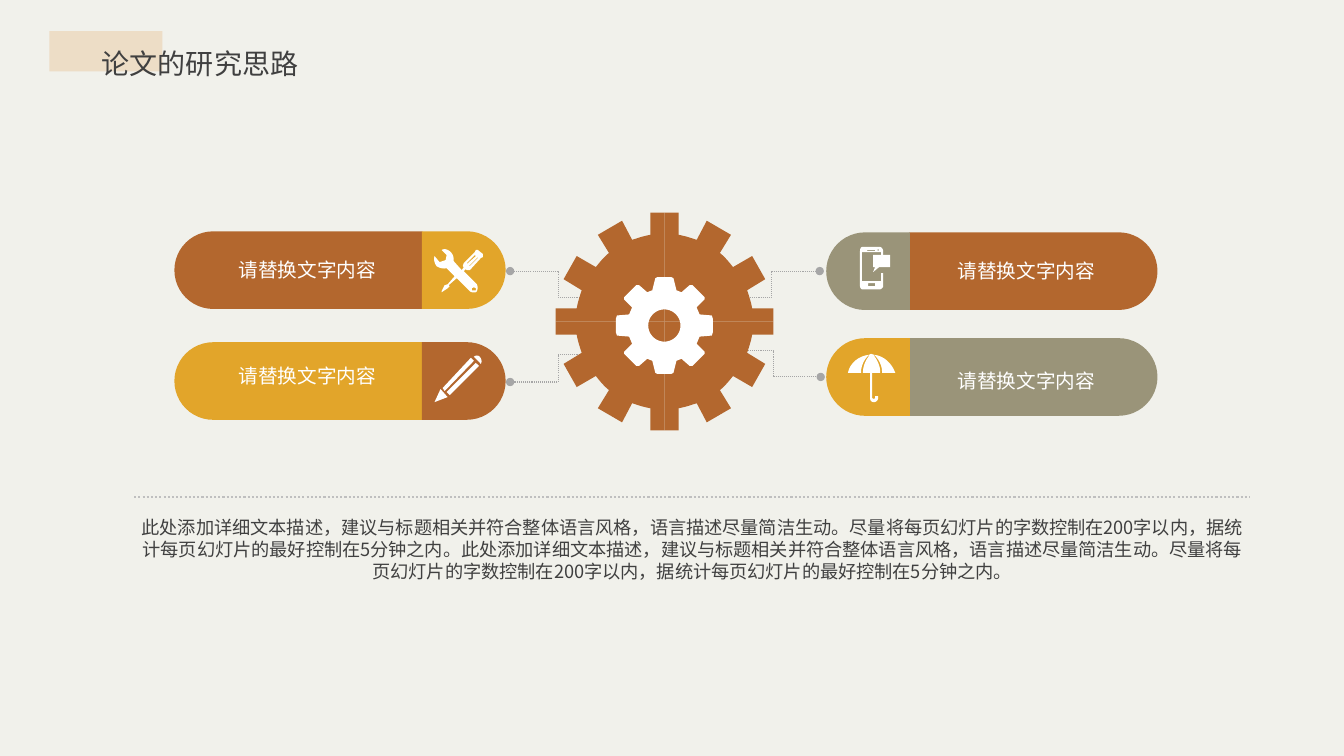
import math
from dataclasses import dataclass

import pptx
import pptx.dml.color
import pptx.enum.dml
import pptx.enum.shapes
import pptx.enum.text
import pptx.oxml.ns
import pptx.util
from lxml import etree

Inches = pptx.util.Inches
RGBColor = pptx.dml.color.RGBColor
Align = pptx.enum.text.PP_ALIGN
Shape = pptx.enum.shapes.MSO_SHAPE
Connector = pptx.enum.shapes.MSO_CONNECTOR
qn = pptx.oxml.ns.qn

PAPER = RGBColor(0xF1, 0xF1, 0xEB)
BEIGE = RGBColor(0xED, 0xDD, 0xC6)
RUST = RGBColor(0xB3, 0x67, 0x2E)
AMBER = RGBColor(0xE2, 0xA5, 0x2A)
OLIVE = RGBColor(0x9A, 0x94, 0x79)
WHITE = RGBColor(0xFF, 0xFF, 0xFF)
INK = RGBColor(0x40, 0x40, 0x40)
LINK_GREY = RGBColor(0xA6, 0xA6, 0xA6)
RULE_GREY = RGBColor(0xBF, 0xBF, 0xBF)
FONT = "Noto Sans CJK SC"

Point = tuple[float, float]
Step = tuple[float, ...]  # two numbers: a corner; six: a cubic curve

PILL_HEIGHT, BODY_LENGTH, CAP_LENGTH = 0.77, 2.46, 0.83
GEAR_CENTRE = (6.59, 3.19)
HUB_CENTRE = (6.59, 3.23)
HOLE_RADIUS = 0.16

GEAR_QUARTER = [
    (0, 0), (0, 1.08), (0.14, 1.08), (0.14, 0.86), (0.2, 0.85, 0.26, 0.83, 0.32, 0.81),
    (0.42, 1), (0.66, 0.86), (0.55, 0.68), (0.6, 0.64, 0.64, 0.59, 0.68, 0.54),
    (0.87, 0.65), (1, 0.42), (0.82, 0.31), (0.84, 0.25, 0.86, 0.19, 0.87, 0.13),
    (1.08, 0.13), (1.08, 0),
]
HUB_QUARTER = [
    (0.07, 0.48), (0.09, 0.47), (0.12, 0.35), (0.17, 0.33), (0.25, 0.4), (0.28, 0.4),
    (0.4, 0.28), (0.4, 0.26), (0.32, 0.18), (0.35, 0.11), (0.47, 0.1), (0.48, 0.07),
]

TOOLS = [
    [(4.79, 2.52), (4.74, 2.48), (4.72, 2.48), (4.71, 2.5), (4.6, 2.61), (4.59, 2.64),
     (4.6, 2.65), (4.58, 2.68), (4.5, 2.59), (4.5, 2.56, 4.5, 2.53, 4.47, 2.5),
     (4.45, 2.48, 4.41, 2.46, 4.38, 2.48), (4.43, 2.53), (4.42, 2.58), (4.36, 2.6),
     (4.31, 2.54), (4.3, 2.58, 4.31, 2.61, 4.33, 2.64), (4.36, 2.66, 4.4, 2.67, 4.43, 2.66),
     (4.51, 2.74), (4.44, 2.82), (4.41, 2.83), (4.38, 2.89), (4.38, 2.9), (4.44, 2.86),
     (4.46, 2.84), (4.45, 2.83), (4.53, 2.76), (4.66, 2.89),
     (4.67, 2.9, 4.72, 2.91, 4.73, 2.89), (4.74, 2.87, 4.74, 2.84, 4.73, 2.82),
     (4.6, 2.69), (4.62, 2.67), (4.63, 2.68), (4.66, 2.68), (4.77, 2.56), (4.79, 2.55)],
    [(4.7, 2.85), (4.72, 2.86), (4.72, 2.88), (4.7, 2.88), (4.68, 2.88), (4.68, 2.86)],
    [(4.63, 2.62), (4.63, 2.61), (4.71, 2.53), (4.72, 2.54)],
    [(4.66, 2.64), (4.65, 2.64), (4.74, 2.55), (4.74, 2.56)],
]
PENCIL_TIP = [[(4.37, 3.86), (4.31, 3.99), (4.44, 3.94)]]
PENCIL_UPPER = [[(4.67, 3.55), (4.39, 3.85), (4.41, 3.88), (4.7, 3.58)]]
PENCIL_LOWER = [[(4.72, 3.6), (4.43, 3.89), (4.46, 3.92), (4.75, 3.63)]]
PENCIL_END = [[(4.76, 3.54), (4.73, 3.51, 4.7, 3.54, 4.7, 3.54), (4.77, 3.61),
               (4.77, 3.61, 4.79, 3.58, 4.76, 3.54)]]
PHONE = [
    [(8.74, 2.79), (8.55, 2.79), (8.55, 2.5), (8.74, 2.5), (8.74, 2.57), (8.76, 2.57),
     (8.76, 2.49), (8.76, 2.47, 8.74, 2.45, 8.73, 2.45), (8.55, 2.45),
     (8.54, 2.45, 8.53, 2.47, 8.53, 2.49), (8.53, 2.84),
     (8.53, 2.85, 8.54, 2.87, 8.55, 2.87), (8.73, 2.87),
     (8.74, 2.87, 8.76, 2.85, 8.76, 2.84), (8.76, 2.71), (8.74, 2.71)],
    [(8.71, 2.47), (8.72, 2.48), (8.71, 2.49), (8.7, 2.48)],
    [(8.6, 2.48), (8.68, 2.48), (8.68, 2.49), (8.6, 2.49)],
    [(8.68, 2.84), (8.61, 2.84), (8.61, 2.81), (8.68, 2.81)],
]
SPEECH = [[(8.66, 2.65), (8.68, 2.65), (8.66, 2.7), (8.72, 2.65), (8.83, 2.65),
           (8.83, 2.53), (8.66, 2.53)]]
UMBRELLA = [
    [(8.75, 3.7), (8.88, 3.7), (8.85, 3.61, 8.77, 3.53, 8.67, 3.52), (8.64, 3.51),
     (8.62, 3.52), (8.52, 3.53, 8.43, 3.6, 8.41, 3.7), (8.54, 3.7),
     (8.54, 3.59, 8.61, 3.53, 8.62, 3.52), (8.62, 3.53),
     (8.55, 3.62, 8.56, 3.7, 8.56, 3.7), (8.63, 3.7), (8.63, 3.95),
     (8.63, 3.97, 8.64, 3.99, 8.67, 3.99), (8.69, 3.99, 8.71, 3.97, 8.71, 3.95),
     (8.71, 3.93), (8.68, 3.93), (8.68, 3.95), (8.67, 3.96), (8.65, 3.95), (8.65, 3.7),
     (8.73, 3.7), (8.73, 3.7, 8.74, 3.62, 8.67, 3.53), (8.67, 3.52),
     (8.68, 3.53, 8.75, 3.59, 8.75, 3.7)],
]
ICON_PARTS = [TOOLS, PENCIL_TIP, PENCIL_UPPER, PENCIL_LOWER, PENCIL_END, PHONE, SPEECH, UMBRELLA]


@dataclass
class Pill:
    body_x: float
    cap_x: float
    middle: float
    body_color: RGBColor
    cap_color: RGBColor
    link_start: Point
    link_end: Point
    label_at: Point
    label_spacing: float


PILLS = [
    Pill(10.25, 8.61, 2.69, RUST, OLIVE, (7.18, 2.95), (8.13, 2.69), (9.37, 2.52), 1.0),
    Pill(10.25, 8.61, 3.74, OLIVE, AMBER, (7.2, 3.48), (8.14, 3.74), (9.37, 3.61), 1.0),
    Pill(2.96, 4.6, 3.78, AMBER, RUST, (6.01, 3.52), (5.06, 3.79), (2.24, 3.59), 0.9),
    Pill(2.96, 4.6, 2.68, RUST, AMBER, (6.01, 2.95), (5.06, 2.69), (2.24, 2.54), 0.9),
]
DESCRIPTION = (
    "此处添加详细文本描述，建议与标题相关并符合整体语言风格，语言描述尽量简洁生动。"
    "尽量将每页幻灯片的字数控制在200字以内，据统计每页幻灯片的最好控制在5分钟之内。"
)


def paint(shape, color: RGBColor) -> None:
    shape.shadow.inherit = False
    shape.fill.solid()
    shape.fill.fore_color.rgb = color
    shape.line.fill.background()


def write(box, text: str, size: float, color: RGBColor, align, spacing: float = 1.0) -> None:
    frame = box.text_frame
    frame.word_wrap = True
    frame.auto_size = pptx.enum.text.MSO_AUTO_SIZE.SHAPE_TO_FIT_TEXT
    frame.vertical_anchor = pptx.enum.text.MSO_ANCHOR.TOP
    para = frame.paragraphs[0]
    para.text = text
    para.alignment = align
    para.line_spacing = spacing
    para.font.size = pptx.util.Pt(size)
    para.font.name = FONT
    para.font.color.rgb = color
    for defaults in box.element.iter(qn("a:defRPr")):
        etree.SubElement(defaults, qn("a:ea"), typeface=FONT)


def add_text(page, at: Point, width: float, height: float):
    return page.shapes.add_textbox(Inches(at[0]), Inches(at[1]), Inches(width), Inches(height))


def add_line(page, kind, start: Point, end: Point, color: RGBColor, weight: float, dots: bool) -> None:
    """Draw a dotted connector, with round dots at both ends if asked."""
    line = page.shapes.add_connector(kind, *(Inches(value) for value in start + end))
    line.line.color.rgb = color
    line.line.width = pptx.util.Pt(weight)
    line.line.dash_style = pptx.enum.dml.MSO_LINE.ROUND_DOT
    properties = line.element.spPr
    if dots:
        for tag in ("a:headEnd", "a:tailEnd"):
            etree.SubElement(properties.find(qn("a:ln")), qn(tag), type="oval")
    etree.SubElement(properties, qn("a:effectLst"))


def add_half_pill(page, x: float, y: float, length: float, rotation: int, color: RGBColor) -> None:
    """Draw a bar centred on x, y whose rounded end is turned by the rotation."""
    half = page.shapes.add_shape(
        Shape.ROUND_2_SAME_RECTANGLE, Inches(x - PILL_HEIGHT / 2), Inches(y - length / 2),
        Inches(PILL_HEIGHT), Inches(length))
    half.adjustments[0] = 0.5
    half.rotation = rotation
    paint(half, color)


def flatten(steps: list[Step]) -> list[Point]:
    """Turn corners and cubic curves into a list of points."""
    points: list[Point] = []
    for step in steps:
        if len(step) == 2:
            points.append(step)
            continue
        knots = [points[-1], step[:2], step[2:4], step[4:]]
        for t in (k / 8 for k in range(1, 9)):
            weights = [math.comb(3, i) * t**i * (1 - t) ** (3 - i) for i in range(4)]
            points.append(tuple(sum(w * knot[axis] for w, knot in zip(weights, knots))
                                for axis in (0, 1)))
    return points


def add_outline(page, contours: list[list[Step]], color: RGBColor) -> None:
    builder = None
    for contour in contours:
        points = [(Inches(x), Inches(y)) for x, y in flatten(contour)]
        if builder is None:
            builder = page.shapes.build_freeform(*points[0])
        else:
            builder.move_to(*points[0])
        builder.add_line_segments(points[1:], close=True)
    paint(builder.convert_to_shape(), color)


def mirror(points: list[Point], centre: Point, right: int, up: int) -> list[Point]:
    return [(centre[0] + right * x, centre[1] - up * y) for x, y in points]


def add_gear(page) -> None:
    rim: list[Point] = []
    for right, up in ((1, 1), (1, -1), (-1, -1), (-1, 1)):
        add_outline(page, [mirror(flatten(GEAR_QUARTER), GEAR_CENTRE, right, up)], RUST)
        rim += mirror(HUB_QUARTER[:: right * up], HUB_CENTRE, right, up)
    hole = [(HUB_CENTRE[0] + HOLE_RADIUS * math.cos(math.tau * k / 40),
             HUB_CENTRE[1] - HOLE_RADIUS * math.sin(math.tau * k / 40)) for k in range(40)]
    add_outline(page, [rim, hole], WHITE)


def main() -> None:
    deck = pptx.Presentation()
    deck.slide_width, deck.slide_height = Inches(13.33), Inches(7.5)
    page = deck.slides.add_slide(deck.slide_layouts[5])
    page.background.fill.solid()
    page.background.fill.fore_color.rgb = PAPER

    title = page.shapes.title
    title.left, title.top, title.width, title.height = map(Inches, (0.91, 0.24, 3.5, 0.55))
    write(title, "论文的研究思路", 20, INK, Align.JUSTIFY, 1.5)
    swatch = page.shapes.add_shape(Shape.RECTANGLE, *map(Inches, (0.49, 0.31, 1.12, 0.4)))
    paint(swatch, BEIGE)
    title.element.addprevious(swatch.element)

    for pill in PILLS:
        add_line(page, Connector.ELBOW, pill.link_start, pill.link_end, LINK_GREY, 0.75, True)
        outward = 90 if pill.body_x > pill.cap_x else 270
        add_half_pill(page, pill.body_x, pill.middle, BODY_LENGTH, outward, pill.body_color)
        add_half_pill(page, pill.cap_x, pill.middle, CAP_LENGTH, 360 - outward, pill.cap_color)
        label = add_text(page, pill.label_at, 1.62, 0.34)
        write(label, "请替换文字内容", 14, WHITE, Align.CENTER, pill.label_spacing)
    for part in ICON_PARTS:
        add_outline(page, part, WHITE)
    add_gear(page)

    description = add_text(page, (1.33, 5.12), 11.07, 0.67)
    frame = description.text_frame
    frame.margin_left = frame.margin_right = frame.margin_top = frame.margin_bottom = 0
    write(description, DESCRIPTION * 2, 13, INK, Align.CENTER)
    add_line(page, Connector.STRAIGHT, (1.33, 4.93), (12.39, 4.93), RULE_GREY, 1.5, False)
    deck.save("out.pptx")


if __name__ == "__main__":
    main()
